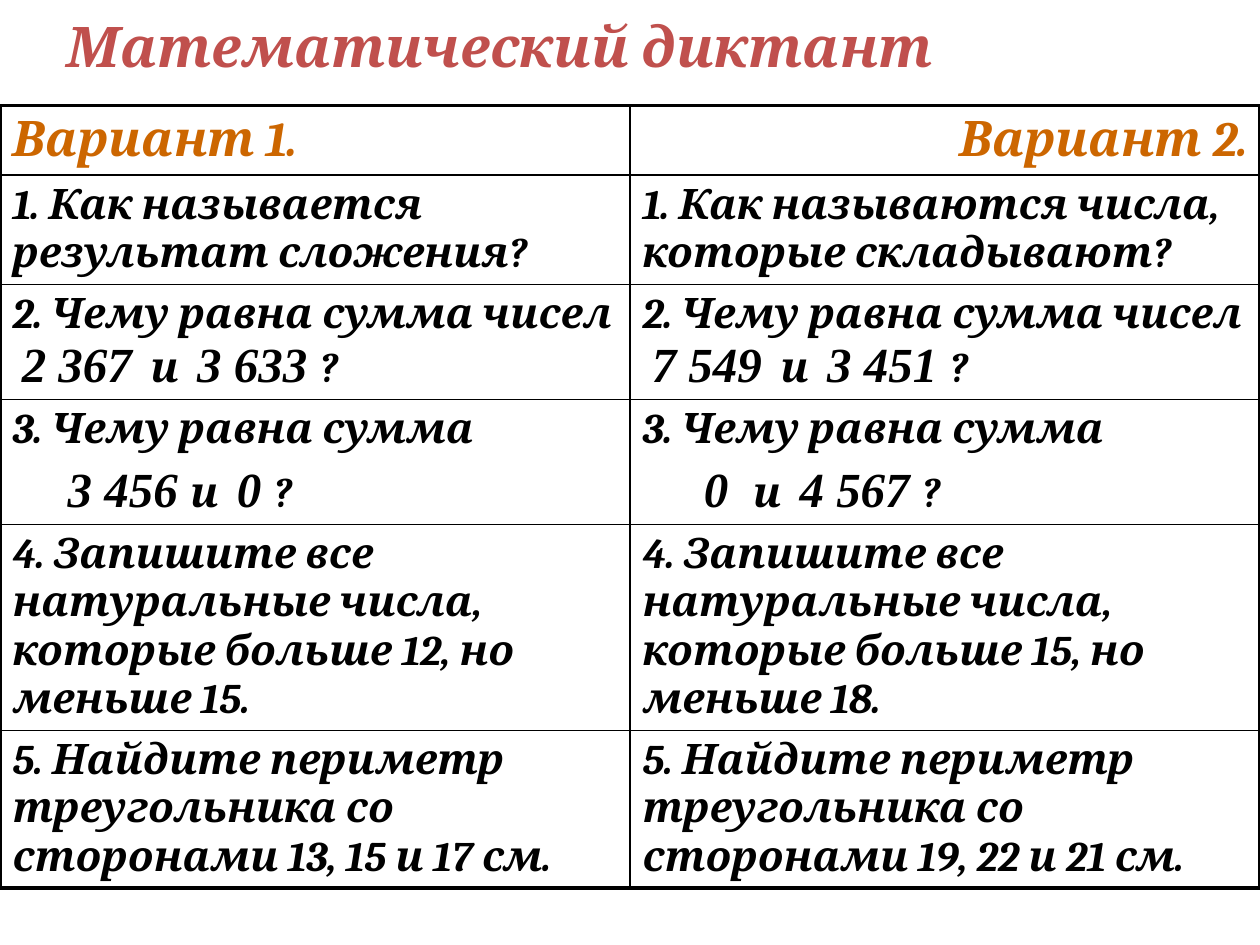
from pptx import Presentation
from pptx.dml.color import RGBColor
from pptx.enum.text import MSO_ANCHOR, MSO_AUTO_SIZE, PP_ALIGN
from pptx.oxml.ns import qn
from pptx.util import Pt
from lxml.etree import SubElement

RED = RGBColor(0xC0, 0x50, 0x4D)
ORANGE = RGBColor(0xCC, 0x66, 0x00)
BLACK = RGBColor(0, 0, 0)
TEXT_FONT, NUMBER_FONT = "Cambria", "Times New Roman"
THIN, THICK = 1, 2.25
ROW_HEIGHTS = [39.6, 59, 59.8, 59, 59, 74.2]


def add_run(p, text, size, color, font=TEXT_FONT):
    r = p.add_run()
    r.text = text
    f = r.font
    f.name, f.size, f.bold, f.italic = font, Pt(size), True, True
    f.color.rgb = color


def add_words(p, text):
    add_run(p, text, 24, BLACK)


def add_number(p, text):
    add_run(p, text, 28, BLACK, NUMBER_FONT)


def format_paragraph(p, indent=0):
    pPr = p._p.get_or_add_pPr()
    pPr.set("marL", str(Pt(indent)))
    pPr.set("indent", "0")
    SubElement(SubElement(pPr, qn("a:spcBef")), qn("a:spcPct"), val="20000")
    return p


def first_paragraph(cell):
    return format_paragraph(cell.text_frame.paragraphs[0])


def add_sum(p, first, joint, second):
    add_number(p, first)
    add_words(p, joint)
    add_number(p, second)
    add_words(p, "?")


def set_borders(cell, widths):
    tcPr = cell._tc.get_or_add_tcPr()
    for side, width in zip("LRTB", widths):
        ln = SubElement(tcPr, qn(f"a:ln{side}"), w=str(Pt(width)))
        fill = SubElement(ln, qn("a:solidFill"))
        SubElement(fill, qn("a:srgbClr"), val=str(BLACK))
    cell.fill.background()


def add_title(s, text):
    sp = s.shapes.title
    sp.left, sp.top, sp.width, sp.height = Pt(31), Pt(-19.5), Pt(648), Pt(90)
    tf = sp.text_frame
    tf.auto_size = MSO_AUTO_SIZE.NONE
    tf.vertical_anchor = MSO_ANCHOR.MIDDLE
    p = tf.paragraphs[0]
    p.alignment = PP_ALIGN.LEFT
    add_run(p, text, 32, RED)


def add_grid(s):
    rows = len(ROW_HEIGHTS)
    frame = s.shapes.add_table(rows, 2, 0, Pt(60.4), Pt(720), Pt(sum(ROW_HEIGHTS)))
    table = frame.table
    table.first_row = table.horz_banding = False
    for i, height in enumerate(ROW_HEIGHTS):
        table.rows[i].height = Pt(height)
        for j in range(2):
            edges = (j == 0, j == 1, i == 0, i == rows - 1)
            set_borders(table.cell(i, j), [THICK if e else THIN for e in edges])
    return table


def fill_variant(table, col, align, question, addends, zero_sum, indent, bounds, sides):
    header, ask, total, zero, between, perimeter = (
        table.cell(i, col) for i in range(len(ROW_HEIGHTS)))

    p = first_paragraph(header)
    p.alignment = align
    add_run(p, f"Вариант {col + 1}.", 28, ORANGE)

    add_words(first_paragraph(ask), f"1. {question}")

    p = first_paragraph(total)
    add_words(p, "2. Чему равна сумма чисел  ")
    add_sum(p, addends[0], "  и  ", addends[1])

    add_words(first_paragraph(zero), "3. Чему равна сумма")
    p = format_paragraph(zero.text_frame.add_paragraph(), indent)
    add_sum(p, zero_sum[0], "и  ", zero_sum[1])

    low, high = bounds
    add_words(first_paragraph(between),
              f"4. Запишите все натуральные числа, которые больше {low}, но меньше {high}.")

    a, b, c = sides
    add_words(first_paragraph(perimeter),
              f"5. Найдите периметр треугольника со сторонами {a}, {b} и {c} см.")


def main():
    prs = Presentation()
    prs.slide_width, prs.slide_height = Pt(720), Pt(540)
    s = prs.slides.add_slide(prs.slide_layouts[5])
    add_title(s, "Математический диктант")
    table = add_grid(s)
    fill_variant(table, 0, PP_ALIGN.LEFT, "Как называется результат сложения?",
                 ("2 367", "3 633 "), ("3 456 ", "0 "), 31.5, (12, 15), (13, 15, 17))
    fill_variant(table, 1, PP_ALIGN.RIGHT, "Как называются числа, которые складывают?",
                 ("7 549", "3 451 "), ("0  ", "4 567 "), 35, (15, 18), (19, 22, 21))
    prs.save("out.pptx")


if __name__ == "__main__":
    main()
